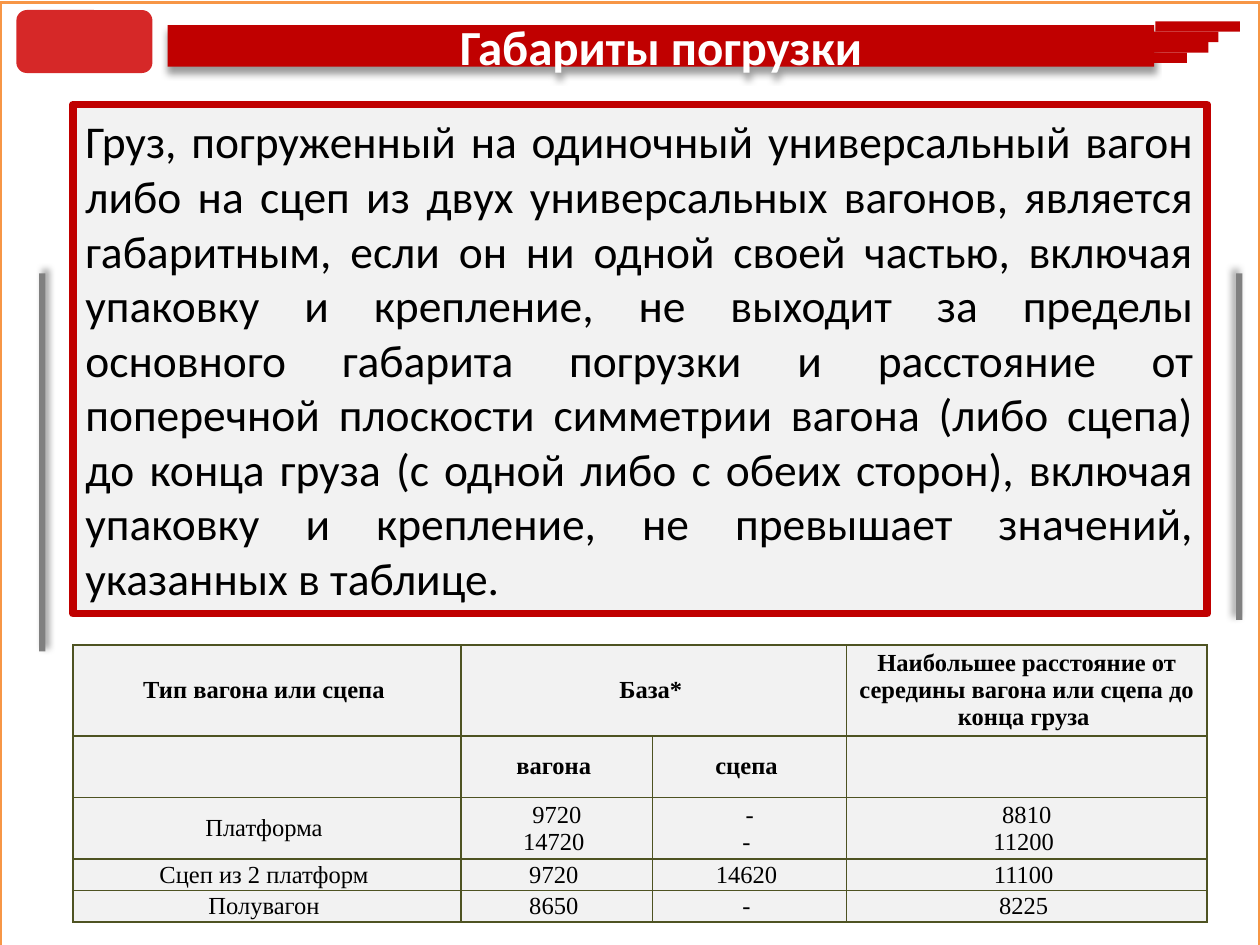
import pptx
import pptx.util
import pptx.dml.color
import pptx.enum.shapes
import pptx.enum.text
import pptx.oxml
import pptx.oxml.ns

Inches = pptx.util.Inches
Pt = pptx.util.Pt
RGBColor = pptx.dml.color.RGBColor
SHAPE = pptx.enum.shapes.MSO_SHAPE
ALIGN = pptx.enum.text.PP_ALIGN
MIDDLE = pptx.enum.text.MSO_ANCHOR.MIDDLE

WHITE = RGBColor(0xFF, 0xFF, 0xFF)
BLACK = RGBColor(0, 0, 0)
RED = RGBColor(0xC0, 0, 0)
EMBLEM_RED = RGBColor(0xD6, 0x28, 0x28)
ORANGE = RGBColor(0xF7, 0x96, 0x46)
GRAY = RGBColor(0x80, 0x80, 0x80)
PALE = RGBColor(0xF2, 0xF2, 0xF2)
OLIVE = RGBColor(0x4E, 0x53, 0x22)

TITLE = "Габариты погрузки"
RULE = (
    "Груз, погруженный на одиночный универсальный вагон либо на сцеп из двух "
    "универсальных вагонов, является габаритным, если он ни одной своей частью, "
    "включая упаковку и крепление, не выходит за пределы основного габарита "
    "погрузки и расстояние от поперечной плоскости симметрии вагона (либо сцепа) "
    "до конца груза (с одной либо с обеих сторон), включая упаковку и крепление, "
    "не превышает значений, указанных в таблице."
)
COLUMN_WIDTHS = [3.08, 1.52, 1.54, 2.86]
ROW_HEIGHTS = [0.72, 0.49, 0.49, 0.25, 0.25]
HEADER_ROWS = 2
ROWS = [
    ["Тип вагона или сцепа", "База*", "",
     "Наибольшее расстояние от середины вагона или сцепа до конца груза"],
    ["", "вагона", "сцепа", ""],
    ["Платформа", "9720\v14720", "-\v-", "8810\v11200"],
    ["Сцеп из 2 платформ", "9720", "14620", "11100"],
    ["Полувагон", "8650", "-", "8225"],
]


def add_box(slide, box, fill, line=None, width=0, kind=SHAPE.RECTANGLE):
    shape = slide.shapes.add_shape(kind, *map(Inches, box))
    shape.shadow.inherit = False
    shape.fill.solid()
    shape.fill.fore_color.rgb = fill
    if line is None:
        shape.line.fill.background()
    else:
        shape.line.color.rgb = line
        shape.line.width = Pt(width)
    return shape


def add_shadow(shape, degrees):
    shape.shadow.inherit = False
    effects = shape._element.spPr.find(pptx.oxml.ns.qn("a:effectLst"))
    effects.append(pptx.oxml.parse_xml(
        f'<a:outerShdw {pptx.oxml.ns.nsdecls("a")} blurRad="{Pt(4)}" '
        f'dist="{Pt(3)}" dir="{degrees * 60000}" algn="ctr" rotWithShape="0">'
        '<a:srgbClr val="000000"><a:alpha val="40000"/></a:srgbClr></a:outerShdw>'))


def format_paragraph(paragraph, name, size, color, align, bold=False):
    paragraph.alignment = align
    font = paragraph.font
    font.name, font.size, font.bold = name, Pt(size), bold
    font.color.rgb = color


def add_frame(slide, box):
    frame = add_box(slide, box, WHITE, ORANGE, 2)
    # Behind the title placeholder
    slide.shapes._spTree.insert(2, frame._element)


def add_header(slide, box):
    left, top, width, height = box
    # Plain emblem
    add_box(slide, (left, top, 1.08, 0.5), EMBLEM_RED, kind=SHAPE.ROUNDED_RECTANGLE)

    # Title band
    title = slide.shapes.title
    title.left, title.top = Inches(left + 1.2), Inches(top + 0.12)
    title.width, title.height = Inches(7.83), Inches(0.33)
    title.fill.solid()
    title.fill.fore_color.rgb = RED
    add_shadow(title, 90)
    title.text_frame.text = TITLE
    title.text_frame.word_wrap = True
    title.text_frame.auto_size = pptx.enum.text.MSO_AUTO_SIZE.NONE
    title.text_frame.vertical_anchor = MIDDLE
    format_paragraph(title.text_frame.paragraphs[0], "Calibri", 28, WHITE,
                     ALIGN.CENTER, True)

    # Stepped stripes at the band's end
    stripe_height = height / 4
    for i, inset in enumerate([0, 0.17, 0.25, 0.42]):
        stripe_left = left + width - 0.67 - inset
        add_box(slide, (stripe_left, top + 0.09 + i * stripe_height, 0.67, stripe_height),
                RED)


def add_side_bars(slide, box):
    left, top, width, height = box
    bar_width = 0.05
    add_shadow(add_box(slide, (left, top, bar_width, height), GRAY), 315)
    add_shadow(add_box(slide, (left + width - bar_width, top, bar_width, height - 0.25),
                       GRAY), 225)


def add_rule(slide, box):
    rule = add_box(slide, box, PALE, RED, 4.5)
    rule.text_frame.word_wrap = True
    rule.text_frame.vertical_anchor = MIDDLE
    rule.text_frame.text = RULE
    format_paragraph(rule.text_frame.paragraphs[0], "Calibri", 26, BLACK, ALIGN.JUSTIFY)


def format_cell(cell, bold):
    properties = cell._tc.get_or_add_tcPr()
    for side in ("lnL", "lnR", "lnT", "lnB"):
        properties.append(pptx.oxml.parse_xml(
            f'<a:{side} {pptx.oxml.ns.nsdecls("a")} w="{Pt(1)}"><a:solidFill>'
            f'<a:srgbClr val="{OLIVE}"/></a:solidFill></a:{side}>'))
    cell.fill.solid()
    cell.fill.fore_color.rgb = PALE
    cell.vertical_anchor = MIDDLE
    cell.margin_left = cell.margin_right = Inches(0.01)
    cell.margin_top = cell.margin_bottom = Inches(0.01)
    format_paragraph(cell.text_frame.paragraphs[0], "Times New Roman", 14, BLACK,
                     ALIGN.CENTER, bold)


def add_limits_table(slide, box):
    limits = slide.shapes.add_table(len(ROWS), len(COLUMN_WIDTHS),
                                    *map(Inches, box)).table
    for column, width in zip(limits.columns, COLUMN_WIDTHS):
        column.width = Inches(width)
    for row, height in zip(limits.rows, ROW_HEIGHTS):
        row.height = Inches(height)
    for r, texts in enumerate(ROWS):
        for c, text in enumerate(texts):
            cell = limits.cell(r, c)
            if text:
                cell.text = text + " "
            format_cell(cell, r < HEADER_ROWS)
    limits.cell(0, 1).merge(limits.cell(0, 2))


def main():
    deck = pptx.Presentation()
    deck.slide_width, deck.slide_height = Inches(10), Inches(7.5)
    slide = deck.slides.add_slide(deck.slide_layouts[5])
    add_frame(slide, (0, 0.02, 10, 7.5))
    add_header(slide, (0.13, 0.08, 9.71, 0.33))
    add_side_bars(slide, (0.31, 2.17, 9.55, 3))
    add_rule(slide, (0.58, 0.83, 9, 4.04))
    add_limits_table(slide, (0.58, 5.12, 9, 2.2))
    deck.save("out.pptx")


if __name__ == "__main__":
    main()
